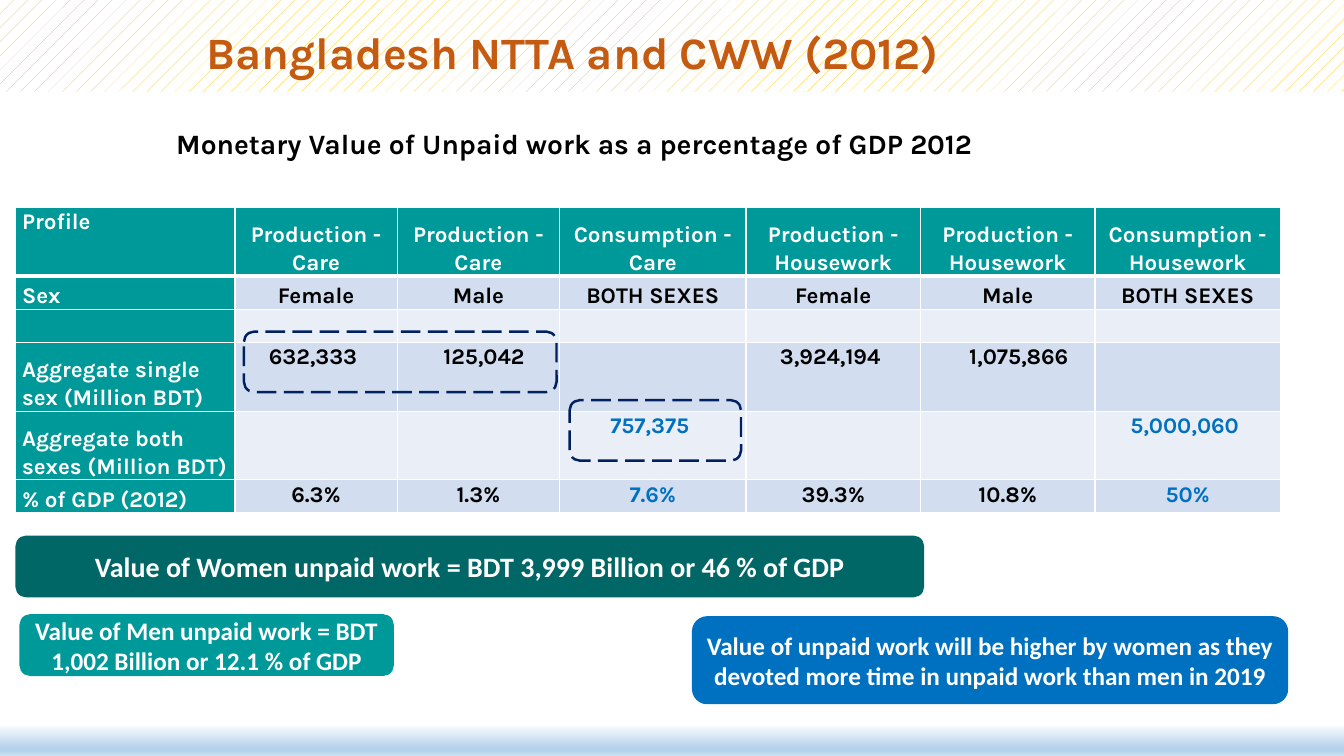
from lxml import etree
from pptx import Presentation
from pptx.dml.color import RGBColor
from pptx.enum.dml import MSO_LINE, MSO_PATTERN
from pptx.enum.shapes import MSO_SHAPE
from pptx.enum.text import MSO_ANCHOR, PP_ALIGN
from pptx.oxml import parse_xml
from pptx.oxml.ns import nsdecls, qn
from pptx.util import Pt

PX = 9144
RECT, ROUND = MSO_SHAPE.RECTANGLE, MSO_SHAPE.ROUNDED_RECTANGLE
TOP, MIDDLE, BOTTOM = MSO_ANCHOR.TOP, MSO_ANCHOR.MIDDLE, MSO_ANCHOR.BOTTOM
LEFT, CENTER, JUSTIFY = PP_ALIGN.LEFT, PP_ALIGN.CENTER, PP_ALIGN.JUSTIFY
COLORS = {
    "white": "FFFFFF", "black": "000000", "orange": "C55A11", "gold": "FFC000",
    "teal": "009999", "deep": "006666", "blue": "0070C0", "navy": "002060",
    "band": "D2DEEF", "pale": "EAEFF7",
}


def rgb(name):
    return RGBColor.from_string(COLORS[name])


def write(frame, text, size=16, font="Karla", color="white", align=CENTER,
          anchor=MIDDLE, lines=None, after=None):
    frame.word_wrap = True
    frame.vertical_anchor = anchor
    para = frame.paragraphs[0]
    para.alignment = align
    if lines:
        para.line_spacing = lines
    if after:
        para.space_after = Pt(after)
    run = para.add_run()
    run.text = text
    run.font.size = Pt(size)
    run.font.name = font
    run.font.bold = True
    run.font.color.rgb = rgb(color)


deck = Presentation()
deck.slide_width, deck.slide_height = 1333 * PX, 750 * PX
slide = deck.slides.add_slide(deck.slide_layouts[6])
shapes = slide.shapes

header = shapes.add_shape(RECT, 0, 0, 1333 * PX, 91 * PX)
header.shadow.inherit = False
header.fill.patterned()
header.fill.pattern = MSO_PATTERN.PERCENT_5
header.fill.fore_color.rgb = rgb("gold")
header.fill.back_color.rgb = rgb("white")
header.line.fill.background()

footer = shapes.add_shape(RECT, 0, 720 * PX, 1333 * PX, 30 * PX)
footer.shadow.inherit = False
footer.line.fill.background()
footer.fill.gradient()
footer.fill.gradient_angle = 270
stops = footer.fill._fill._gradFill.find(qn("a:gsLst"))
for stop in list(stops):
    stops.remove(stop)
for place, tint in [(0, "F7FAFD"), (74, "B5D2EC"), (83, "B5D2EC"), (100, "CEE1F2")]:
    stop = etree.SubElement(stops, qn("a:gs"), pos=str(place * 1000))
    etree.SubElement(stop, qn("a:srgbClr"), val=tint)

title = shapes.add_textbox(13 * PX, 8 * PX, 1111 * PX, 93 * PX)
write(title.text_frame, "Bangladesh NTTA and CWW (2012)", size=32,
      color="orange", lines=0.9)

WIDTHS = [218, 161, 161, 185, 173, 173, 184]
HEIGHTS = [68, 33, 33, 68, 68, 33]
ROWS = [
    ["Profile", "Production - Care", "Production - Care", "Consumption - Care",
     "Production - Housework", "Production - Housework", "Consumption - Housework"],
    ["Sex", "Female", "Male", "BOTH SEXES", "Female", "Male", "BOTH SEXES"],
    [""] * 7,
    ["Aggregate single sex (Million BDT)", "632,333", "125,042", "",
     "3,924,194", "1,075,866", ""],
    ["Aggregate both sexes (Million BDT)", "", "", "757,375", "", "", "5,000,060"],
    ["% of GDP (2012)", "6.3%", "1.3%", "7.6%", "39.3%", "10.8%", "50%"],
]
SHIFTS = {"125,042": 11, "1,075,866": 22}

table = shapes.add_table(6, 7, 15 * PX, 206 * PX, sum(WIDTHS) * PX,
                         sum(HEIGHTS) * PX).table
for col, width in zip(table.columns, WIDTHS):
    col.width = width * PX
for r, (texts, height) in enumerate(zip(ROWS, HEIGHTS)):
    table.rows[r].height = height * PX
    for c, text in enumerate(texts):
        cell = table.cell(r, c)
        head = r == 0 or c == 0
        total = r > 3 and c in (3, 6)
        cell.margin_top = cell.margin_bottom = 0
        cell.margin_left = (7 + SHIFTS.get(text, 0)) * PX
        cell.margin_right = (13 if "," in text and text not in SHIFTS else 7) * PX
        props = cell._tc.get_or_add_tcPr()
        for side in "LRTB":
            thick = 3 if (r, side) in ((0, "B"), (1, "T")) else 1
            props.append(parse_xml(
                f'<a:ln{side} {nsdecls("a")} w="{Pt(thick)}"><a:solidFill>'
                f'<a:srgbClr val="{COLORS["white"]}"/></a:solidFill></a:ln{side}>'))
        cell.fill.solid()
        cell.fill.fore_color.rgb = rgb("teal" if head else "band" if r % 2 else "pale")
        if text:
            low = r == 1 or (head and (r, c) != (0, 0))
            write(cell.text_frame, text, lines=1.07, after=8,
                  color="white" if head else "blue" if total else "black",
                  align=CENTER if c else LEFT, anchor=BOTTOM if low else TOP)
            cell.vertical_anchor = BOTTOM if low else TOP

sub = shapes.add_textbox(165 * PX, 121 * PX, 836 * PX, 44 * PX)
write(sub.text_frame, "Monetary Value of Unpaid work as a percentage of GDP 2012",
      size=20, color="black", align=JUSTIFY, anchor=TOP, after=10)

for x, y, width in [(242, 329, 310), (565, 397, 170)]:
    ring = shapes.add_shape(ROUND, x * PX, y * PX, width * PX, 60 * PX)
    ring.shadow.inherit = False
    ring.fill.background()
    ring.line.color.rgb = rgb("navy")
    ring.line.width = Pt(1.75)
    ring.line.dash_style = MSO_LINE.LONG_DASH

NOTES = [
    (16, 532, 900, 60, "deep", 20,
     "Value of Women unpaid work = BDT 3,999 Billion or 46 % of GDP"),
    (20, 610, 370, 60, "teal", 18,
     "Value of Men unpaid work = BDT 1,002 Billion or 12.1 % of GDP"),
    (687, 612, 590, 86, "blue", 18,
     "Value of unpaid work will be higher by women as they devoted more time "
     "in unpaid work than men in 2019"),
]
for x, y, width, height, color, size, text in NOTES:
    note = shapes.add_shape(ROUND, x * PX, y * PX, width * PX, height * PX)
    note.shadow.inherit = False
    note.fill.solid()
    note.fill.fore_color.rgb = rgb(color)
    note.line.color.rgb = rgb(color)
    note.line.width = Pt(1)
    write(note.text_frame, text, size=size, font="Calibri")

deck.save("out.pptx")
